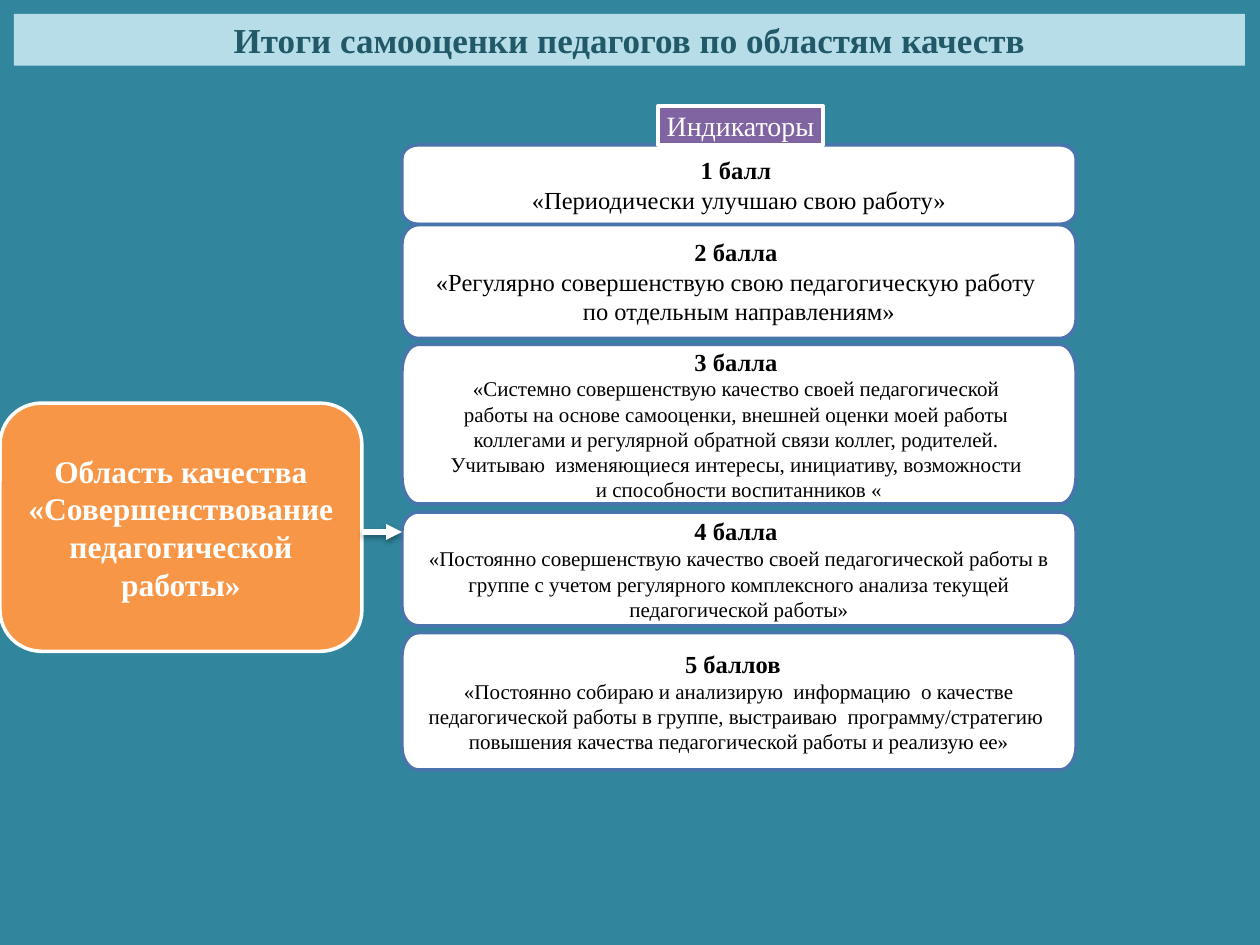
"""Builds a slide with the scoring indicators for one quality area."""
from math import cos, radians, sin

from lxml import etree
from pptx import Presentation
from pptx.dml.color import RGBColor
from pptx.enum.shapes import MSO_CONNECTOR, MSO_SHAPE
from pptx.enum.text import MSO_ANCHOR, MSO_AUTO_SIZE, PP_ALIGN
from pptx.oxml.ns import qn
from pptx.util import Pt

RECT = MSO_SHAPE.RECTANGLE
ROUNDED = MSO_SHAPE.ROUNDED_RECTANGLE
STRAIGHT = MSO_CONNECTOR.STRAIGHT
MIDDLE = MSO_ANCHOR.MIDDLE
NO_FIT = MSO_AUTO_SIZE.NONE
CENTER = PP_ALIGN.CENTER

COLORS = {
    "background": "31859C", "banner": "B7DEE8", "heading": "215968",
    "area": "F79646", "label": "8064A2", "card_line": "4875AC",
    "white": "FFFFFF", "black": "000000",
}
FONT = "Times New Roman"
CARD_LEFT, CARD_WIDTH, CORNER = 229.7, 385.2, 9.5
CARDS = [
    (82.8, 45.4, 14, ["1 балл ", "«Периодически улучшаю свою работу»"]),
    (128.4, 65, 14, ["2 балла ",
                     "«Регулярно совершенствую свою педагогическую работу ",
                     "по отдельным направлениям»"]),
    (196.8, 91.2, 12, ["3 балла ",
                       "«Системно совершенствую качество своей педагогической ",
                       "работы на основе самооценки, внешней оценки моей работы ",
                       "коллегами и регулярной обратной связи коллег, родителей. ",
                       "Учитываю  изменяющиеся интересы, инициативу, возможности ",
                       "и способности воспитанников «"]),
    (292.6, 65, 12, ["4 балла ",
                     "«Постоянно совершенствую качество своей педагогической работы в "
                     "группе с учетом регулярного комплексного анализа текущей "
                     "педагогической работы»"]),
    (361.6, 78.4, 12, ["5 баллов  ",
                       "«Постоянно собираю и анализирую  информацию  о качестве "
                       "педагогической работы в группе, выстраиваю  программу/стратегию  "
                       "повышения качества педагогической работы и реализую ее»"]),
]


def rgb(name):
    return RGBColor.from_string(COLORS[name])


def paint(sp, fill, line):
    sp.shadow.inherit = False
    sp.fill.solid()
    sp.fill.fore_color.rgb = rgb(fill)
    sp.line.color.rgb = rgb(line)
    sp.line.width = Pt(2)


def write(sp, lines, color, margins):
    """Fill a shape with centred paragraphs given as (text, size, bold)."""
    tf = sp.text_frame
    side, edge = (Pt(m) for m in margins)
    frame = {"word_wrap": True, "auto_size": NO_FIT, "vertical_anchor": MIDDLE,
             "margin_left": side, "margin_right": side,
             "margin_top": edge, "margin_bottom": edge}
    for name, value in frame.items():
        setattr(tf, name, value)
    for i, (text, size, bold) in enumerate(lines):
        p = tf.paragraphs[0] if i == 0 else tf.add_paragraph()
        p.alignment = CENTER
        r = p.add_run()
        r.text = text
        for name, value in {"name": FONT, "size": Pt(size), "bold": bold}.items():
            setattr(r.font, name, value)
        r.font.color.rgb = rgb(color)


def add_title(s, text):
    sp = s.shapes.title
    place = {"left": 8, "top": 8, "width": 703.4, "height": 29.5}
    for name, value in place.items():
        setattr(sp, name, Pt(value))
    sp.fill.solid()
    sp.fill.fore_color.rgb = rgb("banner")
    write(sp, [(text, 20, True)], "heading", (7.2, 3.6))


def add_box(s, kind, box, fill, lines, margins):
    sp = s.shapes.add_shape(kind, *(Pt(v) for v in box))
    paint(sp, fill, "white")
    write(sp, lines, "white", margins)
    return sp


def add_card(s, top, height, size, texts):
    """Add a card whose corners are elliptic, a sixth of its height tall."""
    rise = height / 6
    right, bottom = CARD_LEFT + CARD_WIDTH - CORNER, top + height - rise
    left, upper = CARD_LEFT + CORNER, top + rise
    centers = [(left, upper), (right, upper), (right, bottom), (left, bottom)]
    points = []
    for i, (x, y) in enumerate(centers):
        for step in range(0, 91, 10):
            angle = radians(180 + 90 * i + step)
            points.append((Pt(x + CORNER * cos(angle)), Pt(y + rise * sin(angle))))
    builder = s.shapes.build_freeform(*points[0])
    builder.add_line_segments(points[1:], close=True)
    sp = builder.convert_to_shape()
    paint(sp, "white", "card_line")
    body = [(text, size, False) for text in texts[1:]]
    write(sp, [(texts[0], 14, True)] + body, "black", (7.2, 7.2))


def add_arrow(s, x1, x2, y):
    sp = s.shapes.add_connector(STRAIGHT, Pt(x1), Pt(y), Pt(x2), Pt(y))
    sp.line.color.rgb = rgb("white")
    sp.line.width = Pt(3)
    etree.SubElement(sp.line._get_or_add_ln(), qn("a:tailEnd"), type="triangle")
    effects = etree.SubElement(sp._element.spPr, qn("a:effectLst"))
    shadow = etree.SubElement(effects, qn("a:outerShdw"), blurRad=str(Pt(3.1)),
                              dist=str(Pt(1.8)), dir="5400000", rotWithShape="0")
    color = etree.SubElement(shadow, qn("a:srgbClr"), val=COLORS["black"])
    etree.SubElement(color, qn("a:alpha"), val="35000")


def main():
    prs = Presentation()
    prs.slide_width, prs.slide_height = Pt(720), Pt(540)
    s = prs.slides.add_slide(prs.slide_layouts[5])
    s.background.fill.solid()
    s.background.fill.fore_color.rgb = rgb("background")

    add_title(s, "Итоги самооценки педагогов по областям качеств")
    area = ["Область качества «Совершенствование", "педагогической", "работы»"]
    add_box(s, ROUNDED, (0, 230.4, 206.8, 141.8), "area",
            [(text, 18, True) for text in area], (0, 5))
    for card in CARDS:
        add_card(s, *card)
    add_arrow(s, 206.8, CARD_LEFT, 304)
    add_box(s, RECT, (376, 60.5, 94.4, 22.3), "label",
            [("Индикаторы", 16, False)], (0.7, 0.7))
    prs.save("out.pptx")


if __name__ == "__main__":
    main()
